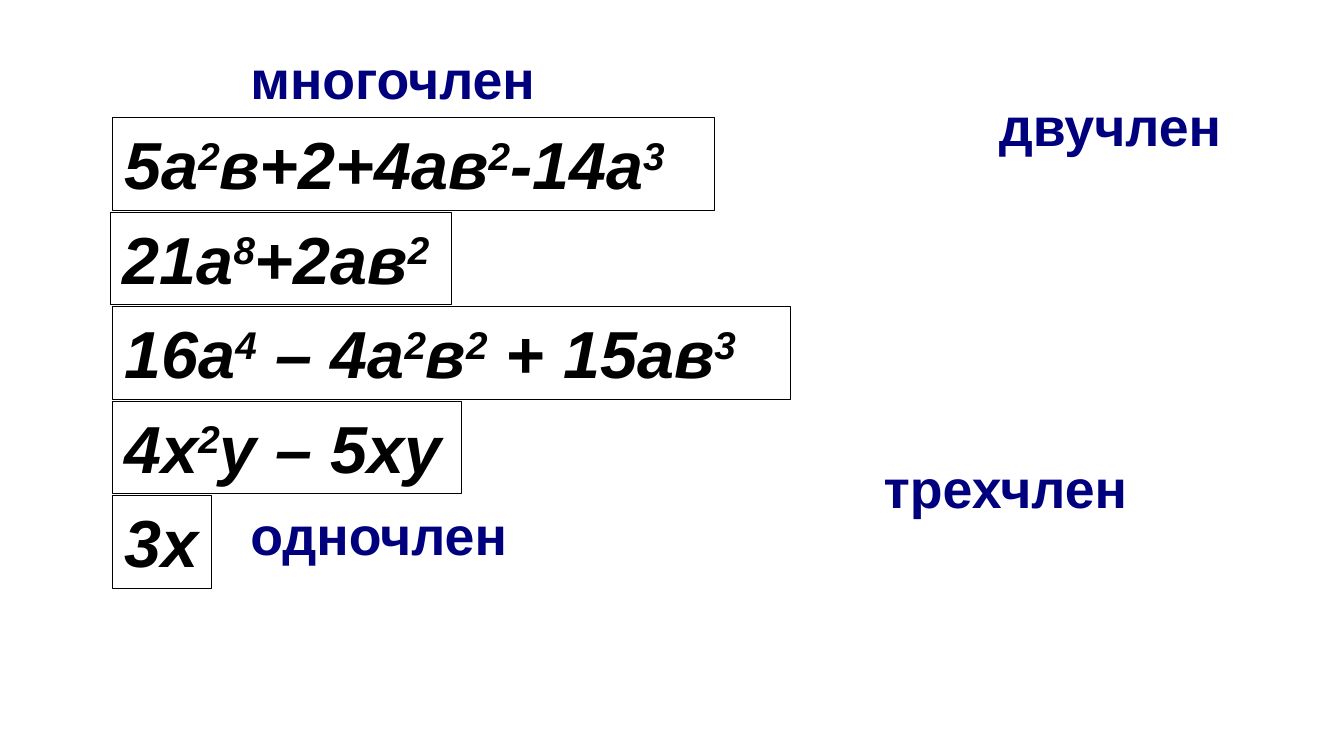
from pptx import Presentation
from pptx.dml.color import RGBColor
from pptx.enum.shapes import MSO_SHAPE
from pptx.enum.text import MSO_ANCHOR, PP_ALIGN
from pptx.util import Inches, Pt

COLORS = {"ink": "000000", "label": "00007E"}

# Formulas from top to bottom: text (^ raises the next digit), left, width
FORMULAS = [
    ("5а^2в+2+4ав^2-14а^3", 1.34, 7.17),
    ("21а^8+2ав^2", 1.32, 4.06),
    ("16а^4 – 4а^2в^2 + 15ав^3", 1.34, 8.07),
    ("4х^2у – 5ху", 1.34, 4.15),
    ("3х", 1.34, 1.18),
]
FORMULA_TOP, FORMULA_STEP, FORMULA_HEIGHT = 1.4, 1.125, 1.1

# Labels: text, left, top, width
LABELS = [
    ("двучлен", 11.75, 1.03, 3.75),
    ("трехчлен", 10.38, 5.34, 4.62),
    ("одночлен", 2.84, 5.9, 3.38),
    ("многочлен", 2.84, 0.48, 4.32),
]
LABEL_HEIGHT = 0.92


def add_run(p, text, size, color, italic=False, raised=False):
    r = p.add_run()
    r.text = text
    r.font.name = "Arial"
    r.font.size = Pt(size)
    r.font.bold = True
    r.font.italic = italic
    r.font.color.rgb = RGBColor.from_string(COLORS[color])
    if raised:
        r._r.get_or_add_rPr().set("baseline", "30000")


def write_text(sp, text, **fmt):
    tf = sp.text_frame
    tf.word_wrap = True
    tf.vertical_anchor = MSO_ANCHOR.TOP
    tf.margin_left = tf.margin_right = Inches(0.14)
    tf.margin_top = tf.margin_bottom = Inches(0.07)
    p = tf.paragraphs[0]
    p.alignment = PP_ALIGN.LEFT
    base, *powers = text.split("^")
    add_run(p, base, **fmt)
    for part in powers:
        add_run(p, part[0], raised=True, **fmt)
        if part[1:]:
            add_run(p, part[1:], **fmt)


def add_formula(s, text, left, top, width):
    sp = s.shapes.add_shape(MSO_SHAPE.RECTANGLE, Inches(left), Inches(top),
                            Inches(width), Inches(FORMULA_HEIGHT))
    sp.shadow.inherit = False
    sp.fill.background()
    sp.line.color.rgb = RGBColor.from_string(COLORS["ink"])
    sp.line.width = Pt(0.75)
    write_text(sp, text, size=57, color="ink", italic=True)


def add_label(s, text, left, top, width):
    sp = s.shapes.add_textbox(Inches(left), Inches(top),
                              Inches(width), Inches(LABEL_HEIGHT))
    write_text(sp, text, size=46, color="label")


def main():
    prs = Presentation()
    prs.slide_width, prs.slide_height = Inches(16), Inches(9)
    s = prs.slides.add_slide(prs.slide_layouts[6])

    # Stack of boxed formulas
    for i, (text, left, width) in enumerate(FORMULAS):
        add_formula(s, text, left, FORMULA_TOP + i * FORMULA_STEP, width)

    # Names of the kinds of expression
    for label in LABELS:
        add_label(s, *label)

    prs.save("out.pptx")


if __name__ == "__main__":
    main()
